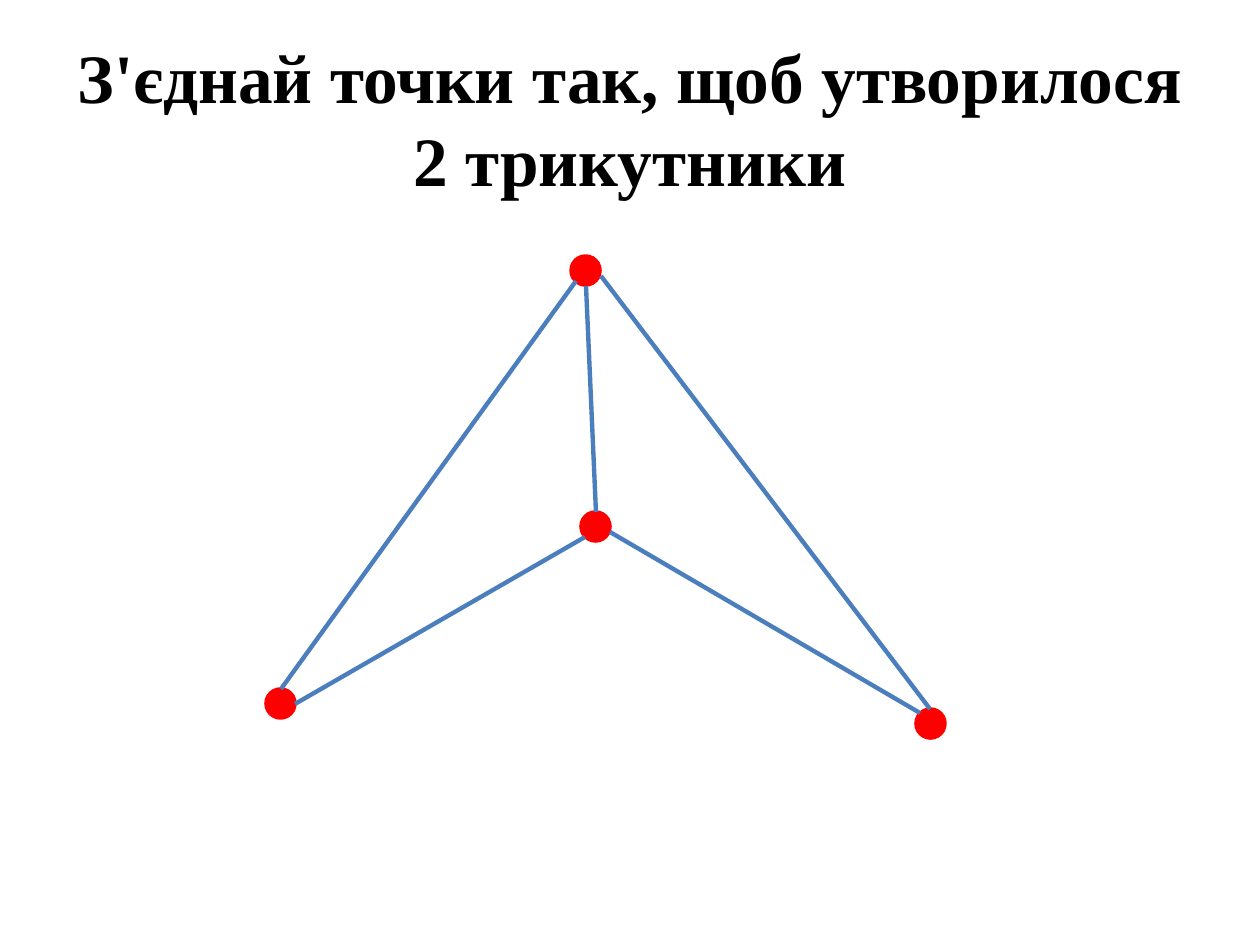
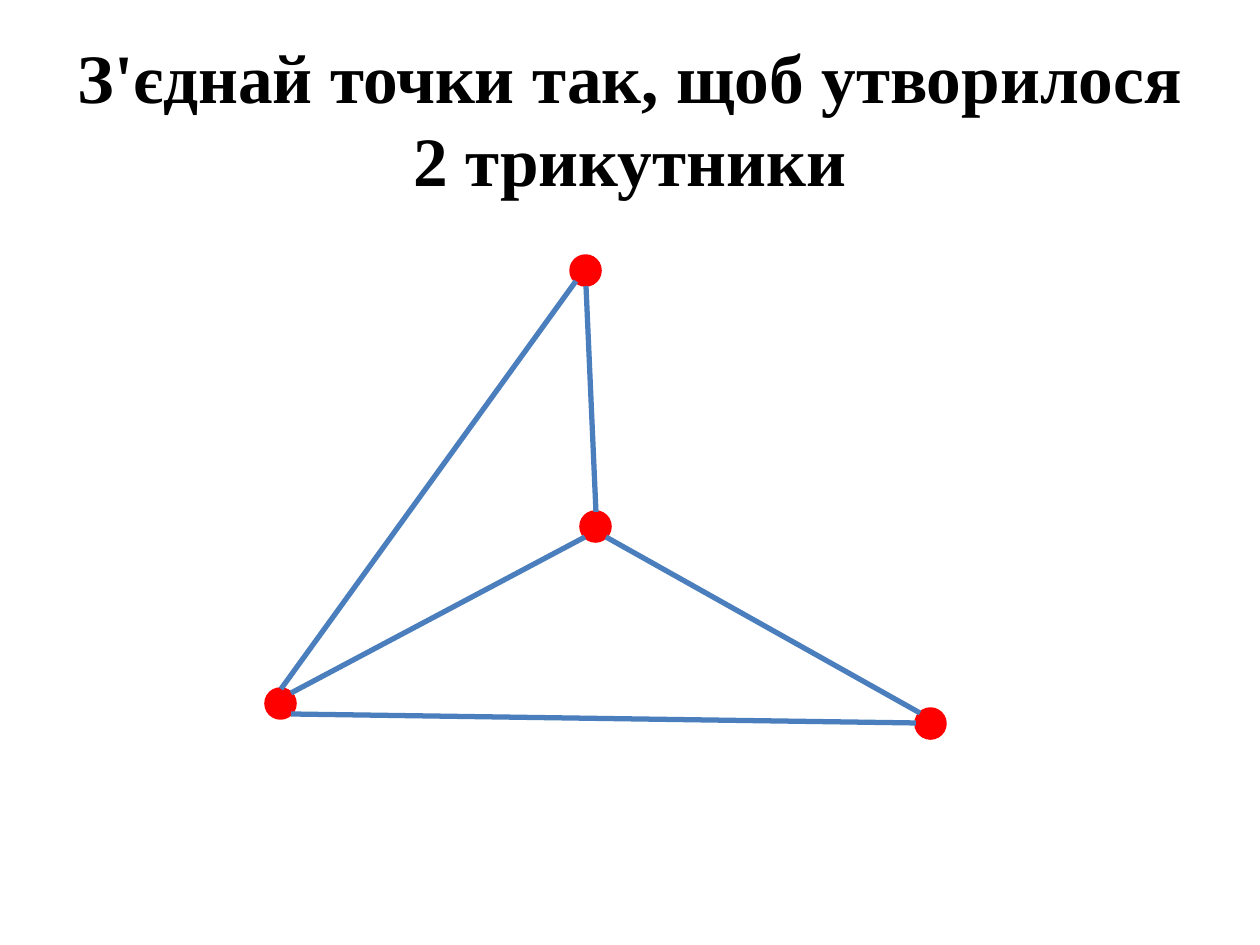
from pptx import Presentation
from pptx.dml.color import RGBColor
from pptx.enum.shapes import MSO_CONNECTOR, MSO_SHAPE
from pptx.enum.text import MSO_ANCHOR, PP_ALIGN
from pptx.util import Emu, Pt
from lxml import etree

A = "http://schemas.openxmlformats.org/drawingml/2006/main"
TITLE = "З'єднай точки так, щоб утворилося 2 трикутники"
RED, BLUE, BLACK = "FF0000", "4B7EBC", "000000"
DOT = 29
DOTS = [(266, 689), (571, 256), (581, 512), (916, 709)]
LEFT_EDGE = (281, 689, 576, 281)
MIDDLE_EDGE = (586, 286, 596, 512)
SOLUTIONS = [
    (2.5, [LEFT_EDGE, (601, 276, 930, 709), (585, 537, 295, 704),
           MIDDLE_EDGE, (610, 532, 920, 713)]),
    (3, [(291, 693, 585, 537), (291, 714, 916, 723), (606, 537, 920, 713),
         MIDDLE_EDGE, LEFT_EDGE]),
]


def px(*values):
    return [Emu(round(v * 914400 / 126)) for v in values]


def color(value):
    return RGBColor.from_string(value)


prs = Presentation()
prs.slide_width, prs.slide_height = px(1260, 945)

for width, edges in SOLUTIONS:
    s = prs.slides.add_slide(prs.slide_layouts[6])

    tf = s.shapes.add_textbox(*px(63, 38, 1134, 158)).text_frame
    tf.word_wrap = True
    tf.vertical_anchor = MSO_ANCHOR.MIDDLE
    p = tf.paragraphs[0]
    p.alignment = PP_ALIGN.CENTER
    r = p.add_run()
    r.text = TITLE
    r.font.name = "Times New Roman"
    r.font.size = Pt(39.6)
    r.font.bold = True
    r.font.color.rgb = color(BLACK)

    for x, y in DOTS:
        sp = s.shapes.add_shape(MSO_SHAPE.FLOWCHART_CONNECTOR, *px(x, y, DOT, DOT))
        sp.shadow.inherit = False
        sp.fill.solid()
        sp.fill.fore_color.rgb = color(RED)
        sp.line.color.rgb = color(RED)
        sp.line.width = Pt(2)

    for edge in edges:
        cx = s.shapes.add_connector(MSO_CONNECTOR.STRAIGHT, *px(*edge))
        cx.line.color.rgb = color(BLUE)
        cx.line.width = Pt(width)
        etree.SubElement(cx._element.spPr, f"{{{A}}}effectLst")

prs.save("out.pptx")
